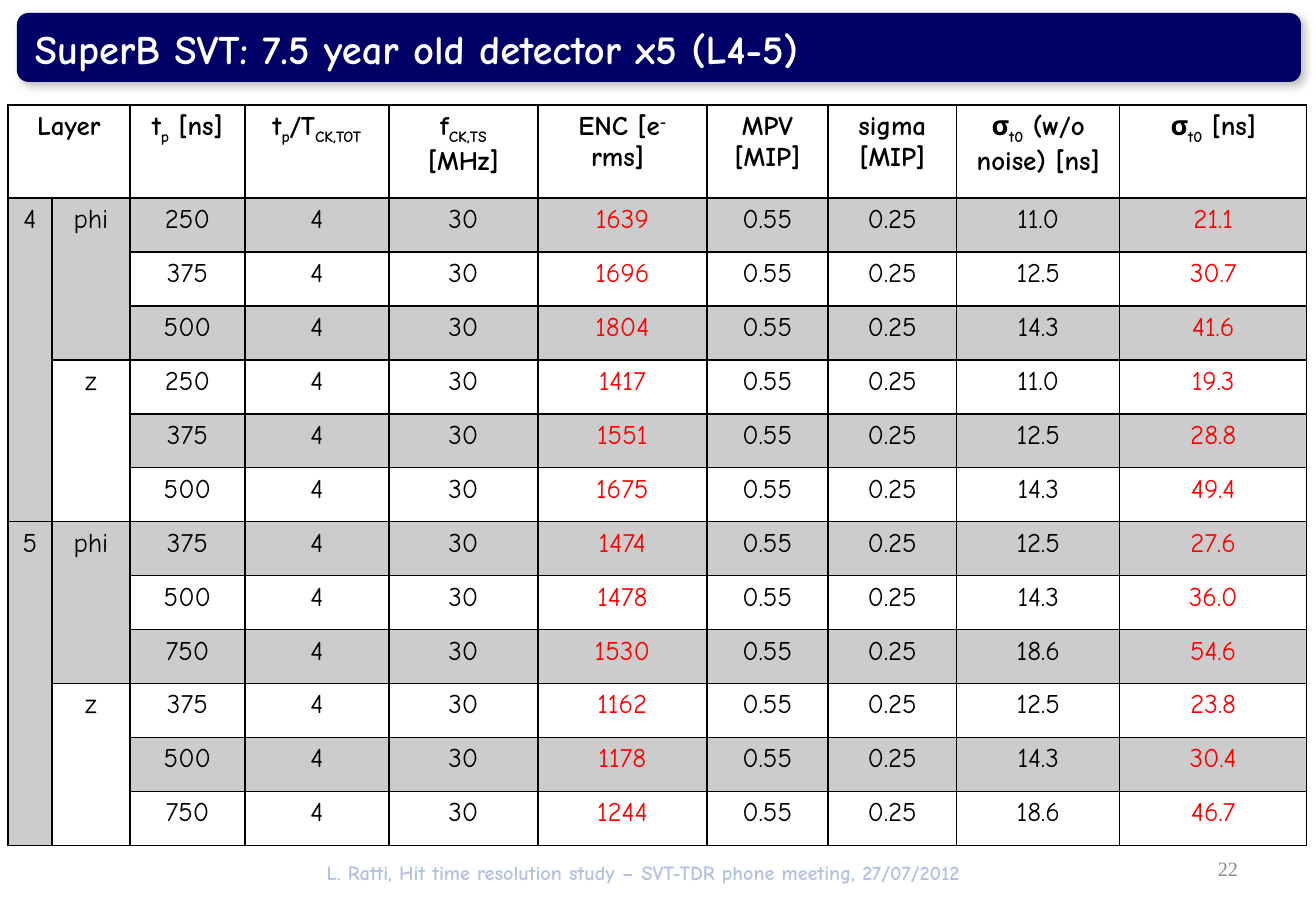
from dataclasses import dataclass
from lxml.etree import SubElement as Sub
from pptx import Presentation
from pptx.dml.color import RGBColor as Rgb
from pptx.enum.shapes import MSO_SHAPE as Shape
from pptx.enum.text import MSO_ANCHOR as Anchor, PP_ALIGN as Align
from pptx.oxml.ns import qn
from pptx.util import Emu, Pt

UNIT = 7526


def px(n):
    return Emu(n * UNIT)


@dataclass(frozen=True)
class Theme:
    navy: str = "000066"
    blue: str = "003399"
    white: str = "FFFFFF"
    black: str = "000000"
    red: str = "FF0000"
    gray: str = "8C8C8C"
    shade: str = "808080"
    sans: str = "Comic Neue"
    serif: str = "Times New Roman"
    head: int = 24
    body: int = 16
    small: int = 12


class Deck:
    def __init__(self, theme, width, height):
        self.theme = theme
        self.prs = Presentation()
        self.prs.slide_width, self.prs.slide_height = px(width), px(height)
        self.slide = self.prs.slides.add_slide(self.prs.slide_layouts[6])

    def alpha(self, node, part):
        color = next(node.iter(qn("a:srgbClr")))
        Sub(color, qn("a:alpha"), val=str(part * 1000))

    def box(self, kind, area, color, part=100):
        shape = self.slide.shapes.add_shape(kind, *map(px, area))
        shape.shadow.inherit = False
        shape.fill.solid()
        shape.fill.fore_color.rgb = Rgb.from_string(color)
        shape.line.fill.background()
        if part < 100:
            self.alpha(shape._element.spPr, part)
        return shape

    def bar(self, area):
        shape = self.box(Shape.ROUNDED_RECTANGLE, area, self.theme.navy)
        shape.adjustments[0] = 0.167
        glow = shape._element.spPr.find(qn("a:effectLst"))
        drop = Sub(glow, qn("a:outerShdw"), blurRad=str(Pt(5)), dist=str(Pt(3)),
                   dir=str(45 * 60000), algn="tl", rotWithShape="0")
        Sub(drop, qn("a:srgbClr"), val=self.theme.shade)
        self.alpha(drop, 50)

    def label(self, frame, text, size, color, bold=False, align=Align.CENTER, face=None):
        para = frame.paragraphs[0]
        para.alignment = align
        for part in text.split("|"):
            run = para.add_run()
            base = {"_": "-25000", "^": "30000"}.get(part[0])
            run.text = part[1:] if base else part
            if base:
                run._r.get_or_add_rPr().set("baseline", base)
        font = para.font
        font.name, font.size, font.bold = face or self.theme.sans, Pt(size), bold
        font.color.rgb = Rgb.from_string(color)

    def text(self, area, text, size, color, anchor=Anchor.TOP, **look):
        frame = self.slide.shapes.add_textbox(*map(px, area)).text_frame
        frame.word_wrap = True
        frame.vertical_anchor = anchor
        self.label(frame, text, size, color, **look)

    def edge(self, cell, top, low):
        props = cell._tc.get_or_add_tcPr()
        for i, (side, width) in enumerate(zip("LRTB", (1, 1, top, low))):
            line = Sub(props, qn(f"a:ln{side}"), w=str(Pt(width)))
            Sub(Sub(line, qn("a:solidFill")), qn("a:srgbClr"), val=self.theme.black)
            props.insert(i, line)

    def grid(self, left, top, cols, rows, data, spans, reds):
        frame = self.slide.shapes.add_table(
            len(rows), len(cols), px(left), px(top), px(sum(cols)), px(sum(rows)))
        table = frame.table
        table.first_row = table.horz_banding = False
        for col, width in zip(table.columns, cols):
            col.width = px(width)
        for row, height in zip(table.rows, rows):
            row.height = px(height)
        for r, c, high, wide in spans:
            table.cell(r, c).merge(table.cell(r + high - 1, c + wide - 1))
        for r, line in enumerate(data):
            for c, text in enumerate(line):
                cell = table.cell(r, c)
                dark = (True, (r - 1) // 3 % 2 == 0)[c] if c < 2 else r % 2 == 1
                if r and dark:
                    cell.fill.solid()
                    cell.fill.fore_color.rgb = Rgb.from_string(self.theme.black)
                    self.alpha(cell._tc.tcPr, 20)
                else:
                    cell.fill.background()
                self.edge(cell, 2 if r == 1 else 1, 1 if r else 2)
                if text:
                    color = self.theme.red if r and c in reds else self.theme.black
                    self.label(cell.text_frame, text, self.theme.body, color, bold=r == 0)


HEAD = ["Layer", "", "t|_p| [ns]", "t|_p|/T|_CK,TOT", "f|_CK,TS| [MHz]",
        "ENC [e|^- |rms] ", "MPV [MIP]", "sigma [MIP]",
        "σ|_t0| (w/o noise) [ns]", "σ|_t0| [ns]"]
BLIND = {250: "11.0", 375: "12.5", 500: "14.3", 750: "18.6"}
RUNS = [
    ("4", "phi", (250, 375, 500), (1639, 1696, 1804), ("21.1", "30.7", "41.6")),
    ("", "z", (250, 375, 500), (1417, 1551, 1675), ("19.3", "28.8", "49.4")),
    ("5", "phi", (375, 500, 750), (1474, 1478, 1530), ("27.6", "36.0", "54.6")),
    ("", "z", (375, 500, 750), (1162, 1178, 1244), ("23.8", "30.4", "46.7")),
]


def main():
    theme = Theme()
    deck = Deck(theme, 1316, 911)
    deck.text((232, 854, 823, 36),
              "L. Ratti, Hit time resolution study – SVT-TDR phone meeting, 27/07/2012",
              theme.small, theme.blue, bold=True)
    deck.box(Shape.RECTANGLE, (1181, 847, 108, 46), theme.white, 40)
    deck.bar((17, 13, 1284, 69))
    deck.box(Shape.RECTANGLE, (10, 782, 1296, 122), theme.white, 70)
    deck.text((943, 844, 307, 49), "22", theme.small, theme.gray,
              anchor=Anchor.MIDDLE, align=Align.RIGHT, face=theme.serif)

    data = [HEAD]
    for layer, view, peaks, noise, sigma in RUNS:
        for i, (peak, enc, res) in enumerate(zip(peaks, noise, sigma)):
            names = ["", ""] if i else [layer, view]
            data.append(names + [str(peak), "4", "30", str(enc),
                                 "0.55", "0.25", BLIND[peak], res])
    spans = [(0, 0, 1, 2)]
    spans += [(r, 0, 6, 1) for r in (1, 7)]
    spans += [(r, 1, 3, 1) for r in range(1, 13, 3)]
    deck.grid(8, 105, [44, 78, 115, 144, 149, 169, 121, 129, 163, 187],
              [93] + [54] * 12, data, spans, (5, 9))

    deck.text((23, 18, 1233, 61), "SuperB SVT: 7.5 year old detector x5 (L4-5)",
              theme.head, theme.white, bold=True, align=Align.LEFT)
    deck.prs.save("out.pptx")


if __name__ == "__main__":
    main()
